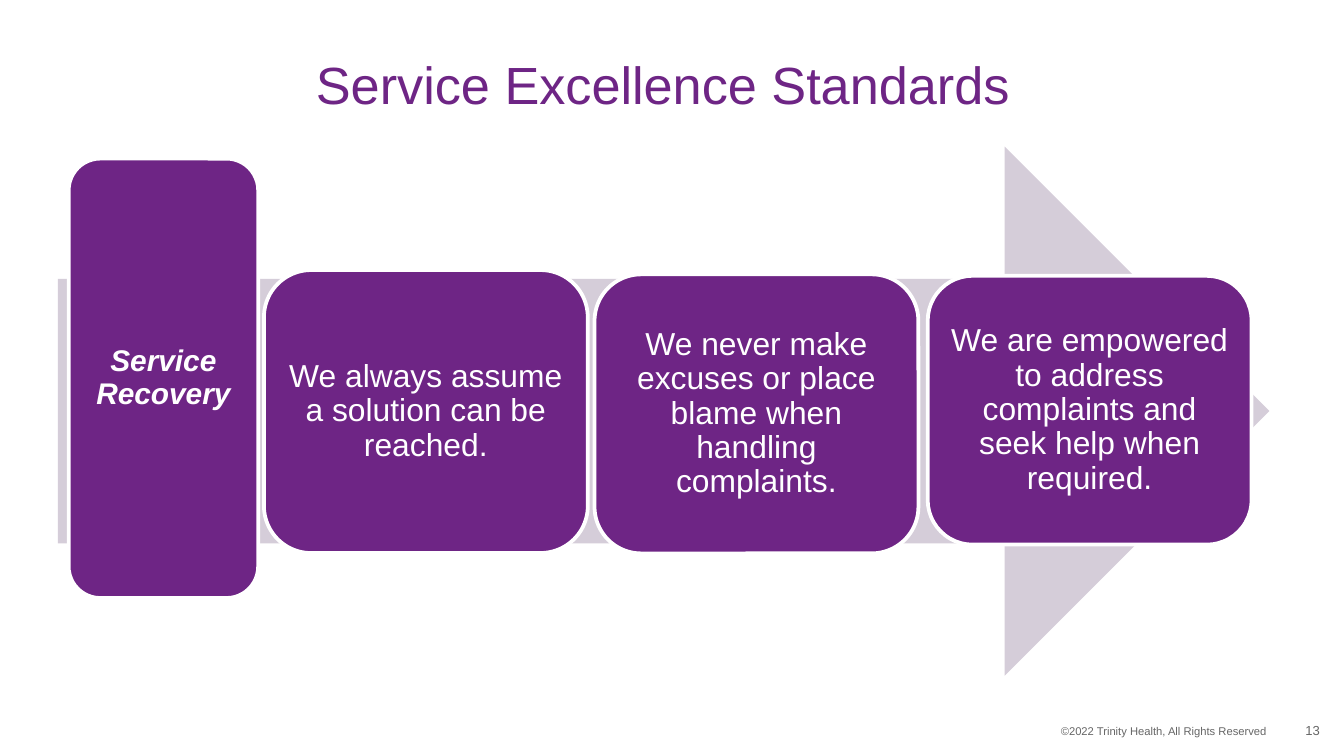
"""Build the Service Excellence Standards slide."""
from dataclasses import dataclass

import pptx
import pptx.dml.color
import pptx.enum.shapes
import pptx.enum.text
import pptx.shapes.autoshape
import pptx.slide
import pptx.text.text
import pptx.util

Pt = pptx.util.Pt
Align = pptx.enum.text.PP_ALIGN
Anchor = pptx.enum.text.MSO_ANCHOR
ShapeType = pptx.enum.shapes.MSO_SHAPE

PURPLE = "6E2585"
LILAC = "D5CDD9"
GREY = "666666"
WHITE = "FFFFFF"


@dataclass(frozen=True)
class Box:
    left: float
    top: float
    width: float
    height: float

    def lengths(self) -> tuple:
        return Pt(self.left), Pt(self.top), Pt(self.width), Pt(self.height)


@dataclass(frozen=True)
class Style:
    size: float
    color: str
    align: Align
    anchor: Anchor = Anchor.MIDDLE
    margins: tuple = (5, 5, 5, 5)
    line_spacing: float = 1.0
    emphasis: bool = False


@dataclass(frozen=True)
class Label:
    text: str
    box: Box
    style: Style


TITLE = Style(28, PURPLE, Align.CENTER, margins=(0, 0, 0, 0), line_spacing=0.9)
COPYRIGHT = Style(6, GREY, Align.RIGHT, Anchor.TOP, (7.2, 3.6, 7.2, 3.6))
PAGE_NUMBER = Style(7, GREY, Align.RIGHT, margins=(7.2, 3.6, 0, 3.6))
HEADING = Style(16, WHITE, Align.CENTER, line_spacing=0.9, emphasis=True)
STANDARD = Style(17, WHITE, Align.CENTER, line_spacing=0.9)

ARROW = Box(31, 78.5, 649, 283.5)
LABELS = [
    Label("Service Excellence Standards", Box(31, 27.2, 648, 39.6), TITLE),
    Label("©2022 Trinity Health, All Rights Reserved", Box(384, 384.5, 301.5, 14.4), COPYRIGHT),
    Label("13", Box(675.5, 380.2, 31.5, 21.6), PAGE_NUMBER),
]
CARDS = [
    Label("Service Recovery", Box(36.8, 85, 101.5, 235.4), HEADING),
    Label("We always assume a solution can be reached.",
          Box(141.4, 144.7, 173.5, 151.6), STANDARD),
    Label("We never make excuses or place blame when handling complaints.",
          Box(318.5, 147, 173.5, 149.5), STANDARD),
    Label("We are empowered to address complaints and seek help when required.",
          Box(497, 147.8, 173.5, 144), STANDARD),
]


def rgb(color: str) -> pptx.dml.color.RGBColor:
    return pptx.dml.color.RGBColor.from_string(color)


def write(frame: pptx.text.text.TextFrame, label: Label) -> None:
    style = label.style
    frame.text = label.text
    frame.word_wrap = True
    frame.vertical_anchor = style.anchor
    (frame.margin_left, frame.margin_top,
     frame.margin_right, frame.margin_bottom) = map(Pt, style.margins)
    paragraph = frame.paragraphs[0]
    paragraph.alignment = style.align
    paragraph.line_spacing = style.line_spacing
    font = paragraph.runs[0].font
    font.name = "Arial"
    font.size = Pt(style.size)
    font.bold = font.italic = style.emphasis
    font.color.rgb = rgb(style.color)


def add_filled(slide: pptx.slide.Slide, kind: ShapeType, box: Box,
               color: str) -> pptx.shapes.autoshape.Shape:
    shape = slide.shapes.add_shape(kind, *box.lengths())
    shape.shadow.inherit = False
    shape.fill.solid()
    shape.fill.fore_color.rgb = rgb(color)
    shape.line.fill.background()
    return shape


def add_label(slide: pptx.slide.Slide, label: Label) -> None:
    write(slide.shapes.add_textbox(*label.box.lengths()).text_frame, label)


def add_card(slide: pptx.slide.Slide, card: Label) -> None:
    shape = add_filled(slide, ShapeType.ROUNDED_RECTANGLE, card.box, PURPLE)
    shape.line.color.rgb = rgb(WHITE)
    shape.line.width = Pt(2)
    write(shape.text_frame, card)


def main() -> None:
    presentation = pptx.Presentation()
    presentation.slide_width = Pt(720)
    presentation.slide_height = Pt(405)
    slide = presentation.slides.add_slide(presentation.slide_layouts[6])
    for label in LABELS:
        add_label(slide, label)
    add_filled(slide, ShapeType.RIGHT_ARROW, ARROW, LILAC)
    for card in CARDS:
        add_card(slide, card)
    presentation.save("out.pptx")


if __name__ == "__main__":
    main()
